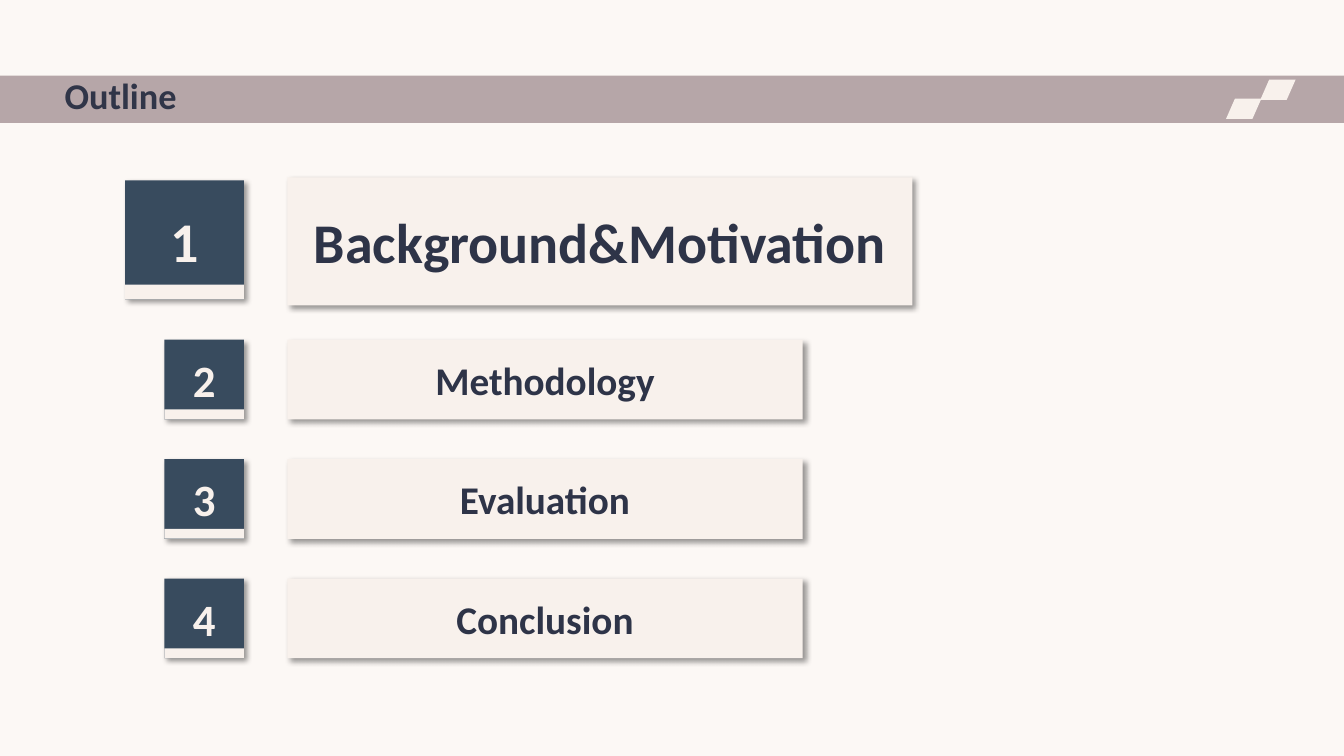
from lxml.etree import SubElement
from pptx import Presentation
from pptx.dml.color import RGBColor
from pptx.enum.shapes import MSO_SHAPE
from pptx.enum.text import MSO_ANCHOR, MSO_AUTO_SIZE, PP_ALIGN
from pptx.oxml.ns import qn
from pptx.util import Inches, Pt

HUES = {
    "back": "FCF8F5",
    "bar": "B6A6A8",
    "cream": "F8F1EC",
    "navy": "384B5E",
    "ink": "2E3448",
    "head": "303548",
    "shade": "000000",
}


class Deck:
    """Holds the style and the current slide, and draws each kind of element."""

    def __init__(self):
        self.font = "Calibri"
        self.prs = Presentation()
        self.prs.slide_width = Inches(13.33)
        self.prs.slide_height = Inches(7.5)
        self.slide = self.prs.slides.add_slide(self.prs.slide_layouts[5])
        self.paint(self.slide.background.fill, "back")

    def paint(self, fill, hue):
        fill.solid()
        fill.fore_color.rgb = RGBColor.from_string(HUES[hue])

    def label(self, shape, text, size, hue, align=PP_ALIGN.CENTER):
        frame = shape.text_frame
        frame.text = text
        frame.word_wrap = True
        frame.auto_size = MSO_AUTO_SIZE.NONE
        frame.vertical_anchor = MSO_ANCHOR.MIDDLE
        para = frame.paragraphs[0]
        para.alignment = align
        para.font.name = self.font
        para.font.size = Pt(size)
        para.font.bold = True
        para.font.color.rgb = RGBColor.from_string(HUES[hue])
        return para

    def shape(self, box, hue, kind=MSO_SHAPE.RECTANGLE, home=None):
        home = home or self.slide.shapes
        shape = home.add_shape(kind, *map(Inches, box))
        shape.shadow.inherit = False
        self.paint(shape.fill, hue)
        shape.line.fill.background()
        return shape

    def shade(self, shape):
        glow = shape._element.spPr.find(qn("a:effectLst"))
        drop = SubElement(glow, qn("a:outerShdw"), blurRad=str(Pt(4)), dist=str(Pt(3)),
                          dir=str(45 * 60000), algn="tl", rotWithShape="0")
        tint = SubElement(drop, qn("a:srgbClr"), val=HUES["shade"])
        SubElement(tint, qn("a:alpha"), val="40000")

    def slant(self, left, top):
        mark = self.shape((left, top, 0.35, 0.2), "cream", MSO_SHAPE.PARALLELOGRAM)
        mark.adjustments[0] = 0.44

    def title(self, text, box):
        head = self.slide.shapes.title
        head.left, head.top, head.width, head.height = map(Inches, box)
        self.label(head, text, 25.9, "head", PP_ALIGN.LEFT).line_spacing = 0.8
        self.slide.shapes._spTree.append(head._element)

    def panel(self, box, text, size):
        panel = self.shape(box, "cream")
        self.shade(panel)
        self.label(panel, text, size, "ink")

    def tile(self, right, top, side, text, size):
        home = self.slide.shapes.add_group_shape().shapes
        left, strip = right - side, side / 8
        tile = self.shape((left, top, side, side), "navy", home=home)
        self.shade(tile)
        self.label(tile, text, size, "cream")
        self.shape((left, top + side - strip, side, strip), "cream", home=home)


def main():
    deck = Deck()
    deck.shape((0, 0.75, 13.33, 0.47), "bar")
    deck.slant(12.5, 0.79)
    deck.slant(12.16, 0.98)
    deck.title("Outline", (0.54, 0.75, 11.62, 0.47))

    left, right, side = 2.85, 2.42, 0.79
    deck.panel((left, 1.76, 6.2, 1.27), "Background&Motivation", 40)
    deck.tile(right, 1.79, 1.18, "1", 40)
    for row, name in enumerate(("Methodology", "Evaluation", "Conclusion")):
        top = 3.37 + row * side * 1.5
        deck.tile(right, top, side, str(row + 2), 32)
        deck.panel((left, top, 5.11, side), name, 28)
    deck.prs.save("out.pptx")


if __name__ == "__main__":
    main()
